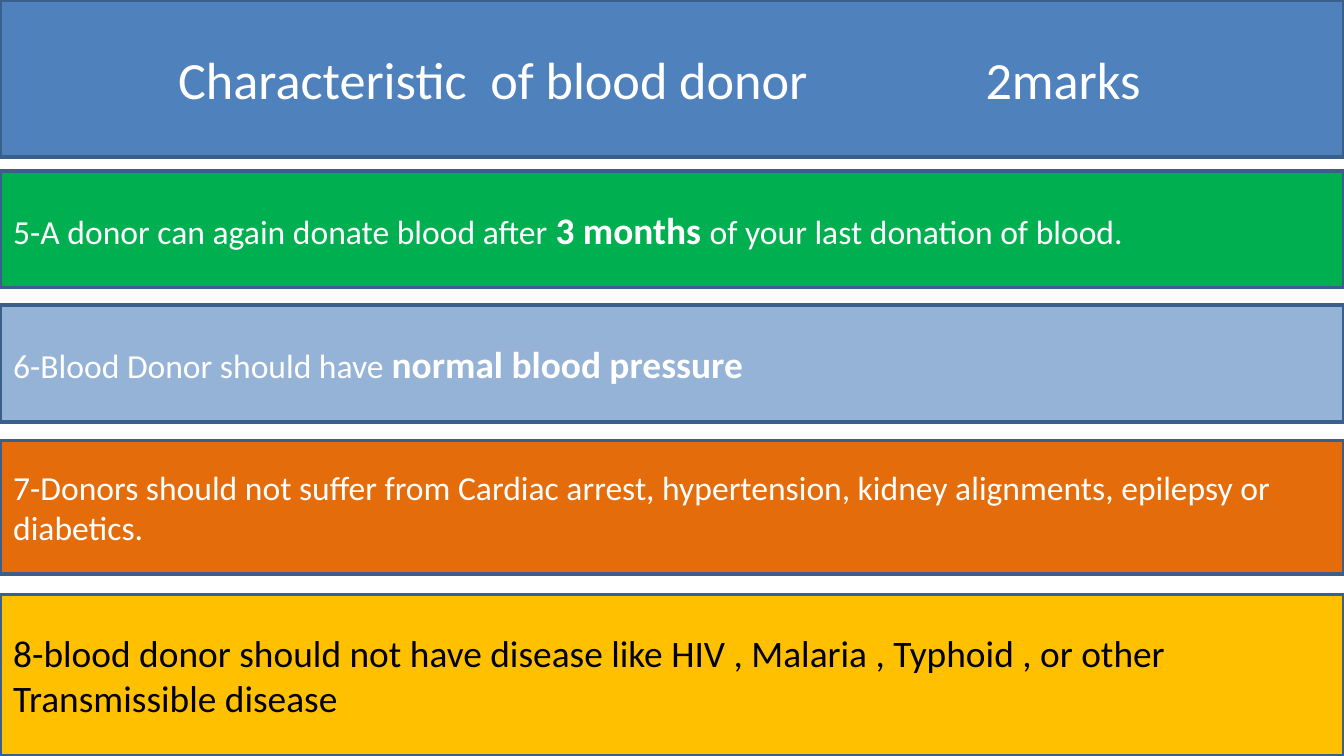
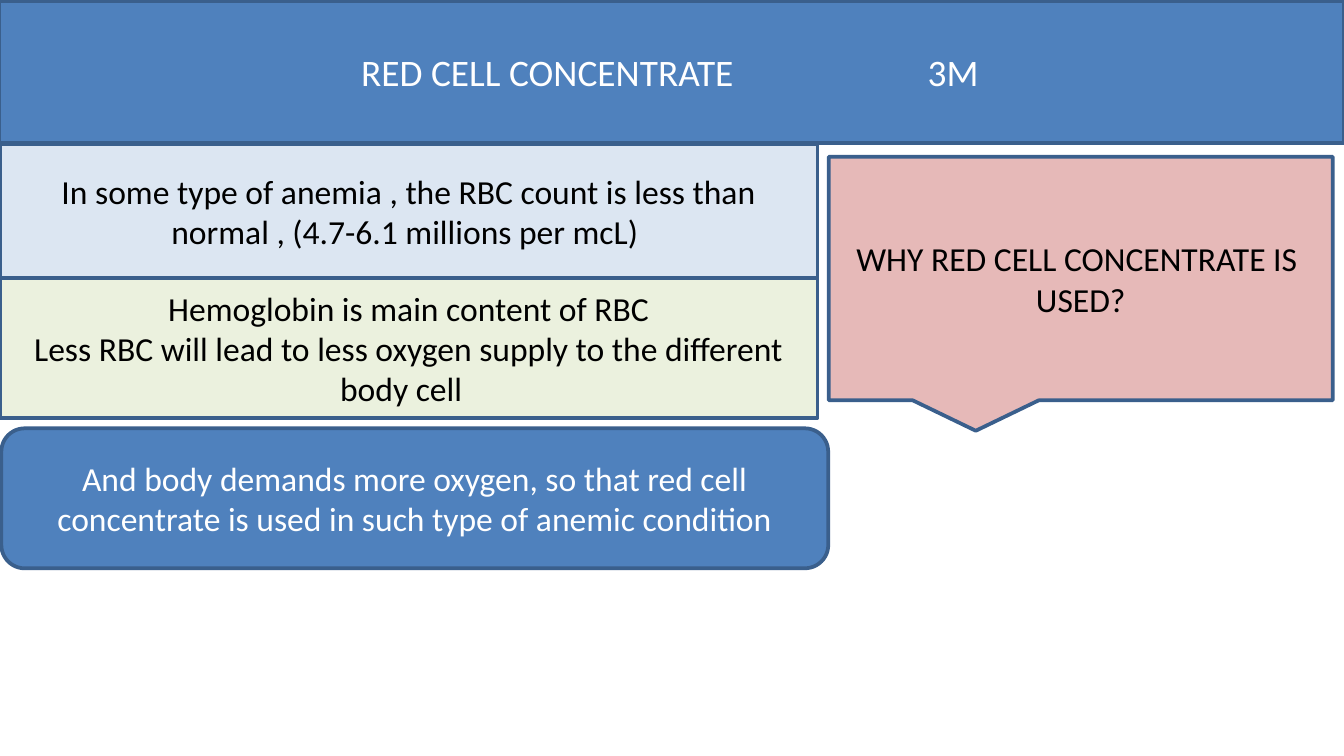
import pptx
import pptx.dml.color
import pptx.enum.shapes
import pptx.enum.text
import pptx.oxml
import pptx.oxml.ns
import pptx.util

Pt = pptx.util.Pt
RGBColor = pptx.dml.color.RGBColor
SHAPE = pptx.enum.shapes.MSO_SHAPE
ALIGN = pptx.enum.text.PP_ALIGN

WIDTH, HEIGHT = 720, 405
FONT = "Calibri"
BLUE = RGBColor(0x4F, 0x81, 0xBD)
OUTLINE = RGBColor(0x3A, 0x5F, 0x8C)
GREEN = RGBColor(0x00, 0xB0, 0x50)
LIGHT_BLUE = RGBColor(0x95, 0xB3, 0xD7)
ORANGE = RGBColor(0xE4, 0x6C, 0x0A)
AMBER = RGBColor(0xFF, 0xC0, 0x00)
PINK = RGBColor(0xE6, 0xB9, 0xB8)
PALE_BLUE = RGBColor(0xDC, 0xE6, 0xF2)
PALE_GREEN = RGBColor(0xEB, 0xF1, 0xDE)
WHITE = RGBColor(0xFF, 0xFF, 0xFF)
BLACK = RGBColor(0x00, 0x00, 0x00)


def add_panel(slide, box, fill, paragraphs, color=WHITE, align=ALIGN.CENTER,
              preset=SHAPE.RECTANGLE):
    """Draw an outlined panel; each paragraph is a list of (text, size, bold)."""
    panel = slide.shapes.add_shape(preset, *(Pt(length) for length in box))
    panel.shadow.inherit = False
    panel.fill.solid()
    panel.fill.fore_color.rgb = fill
    panel.line.color.rgb = OUTLINE
    panel.line.width = Pt(2)
    frame = panel.text_frame
    frame.word_wrap = True
    frame.vertical_anchor = pptx.enum.text.MSO_ANCHOR.MIDDLE
    for index, pieces in enumerate(paragraphs):
        paragraph = frame.add_paragraph() if index else frame.paragraphs[0]
        paragraph.alignment = align
        for text, size, bold in pieces:
            run = paragraph.add_run()
            run.text = text
            run.font.name = FONT
            run.font.size = Pt(size)
            run.font.bold = bold
            run.font.color.rgb = color
    return panel


def add_header(slide, box, title, marks, size, title_x, marks_x):
    """Draw the title band, with the marks set at a tab stop after the title."""
    header = add_panel(slide, box, BLUE, [[(f"{title}\t{marks}", size, False)]],
                       align=ALIGN.LEFT)
    frame = header.text_frame
    frame.margin_left = Pt(title_x - box[0])
    properties = frame.paragraphs[0]._p.get_or_add_pPr()
    properties.append(pptx.oxml.parse_xml(
        f'<a:tabLst {pptx.oxml.ns.nsdecls("a")}>'
        f'<a:tab pos="{Pt(marks_x - title_x)}" algn="l"/></a:tabLst>'))


def add_donor_rules(slide, box):
    """Stack the full-width donor rules; tops are relative to the box."""
    left, top, width, height = box
    rules = [
        (0, 62.5, GREEN, WHITE, [[
            ("5-A donor can again donate blood after ", 18, False),
            ("3 months ", 20, True),
            ("of your last donation of blood.", 18, False)]]),
        (72, 62.5, LIGHT_BLUE, WHITE, [[
            ("6-Blood Donor should have ", 18, False),
            ("normal blood pressure", 20, True)]]),
        (144.5, 71.5, ORANGE, WHITE, [[
            ("7-Donors should not suffer from Cardiac arrest, hypertension, "
             "kidney alignments, epilepsy or diabetics.", 18, False)]]),
        (227, height - 227, AMBER, BLACK, [
            [("8-blood donor should not have disease like HIV , Malaria , "
              "Typhoid , or other", 20, False)],
            [("Transmissible disease", 20, False)]]),
    ]
    for offset, rule_height, fill, color, paragraphs in rules:
        add_panel(slide, (left, top + offset, width, rule_height), fill,
                  paragraphs, color, ALIGN.LEFT)


def add_question(slide, box):
    add_panel(slide, box, PINK,
              [[("WHY RED CELL CONCENTRATE IS ", 18, False)],
               [("USED?", 18, False)]],
              BLACK, preset=SHAPE.RECTANGULAR_CALLOUT)


def add_reasons(slide, box):
    """Two joined reasons, then the conclusion in a wider rounded panel."""
    left, top, width, height = box
    anemia_height, row_height = 72, 75
    add_panel(slide, (left, top, width, anemia_height), PALE_BLUE,
              [[("In some type of anemia , the RBC count is less than normal , "
                 "(4.7-6.1 millions per mcL) ", 18, False)]], BLACK)
    add_panel(slide, (left, top + anemia_height, width, row_height), PALE_GREEN,
              [[("Hemoglobin is main content of RBC", 18, False)],
               [("Less RBC will lead to less oxygen supply to the different "
                 "body cell  ", 18, False)]], BLACK)
    add_panel(slide, (left + 0.75, top + height - row_height, width + 5, row_height),
              BLUE,
              [[("And body demands more oxygen, so that red cell concentrate "
                 "is used in such type of anemic condition", 18, False)]],
              preset=SHAPE.ROUNDED_RECTANGLE)


def build_donor_slide(slide):
    add_header(slide, (0, 0, WIDTH, 84), "Characteristic  of blood donor",
               "2marks", 28, title_x=95.5, marks_x=528)
    add_donor_rules(slide, (0, 91.5, WIDTH, HEIGHT - 91.5))


def build_red_cell_slide(slide):
    add_header(slide, (-0.5, 0.5, WIDTH + 0.5, 76), "RED CELL CONCENTRATE",
               "3M", 20, title_x=193.5, marks_x=497)
    add_question(slide, (444, 84, 270, 130.5))
    add_reasons(slide, (0, 77, 438, 227.5))


def main():
    deck = pptx.Presentation()
    deck.slide_width, deck.slide_height = Pt(WIDTH), Pt(HEIGHT)
    for build in (build_donor_slide, build_red_cell_slide):
        build(deck.slides.add_slide(deck.slide_layouts[6]))
    deck.save("out.pptx")


if __name__ == "__main__":
    main()
